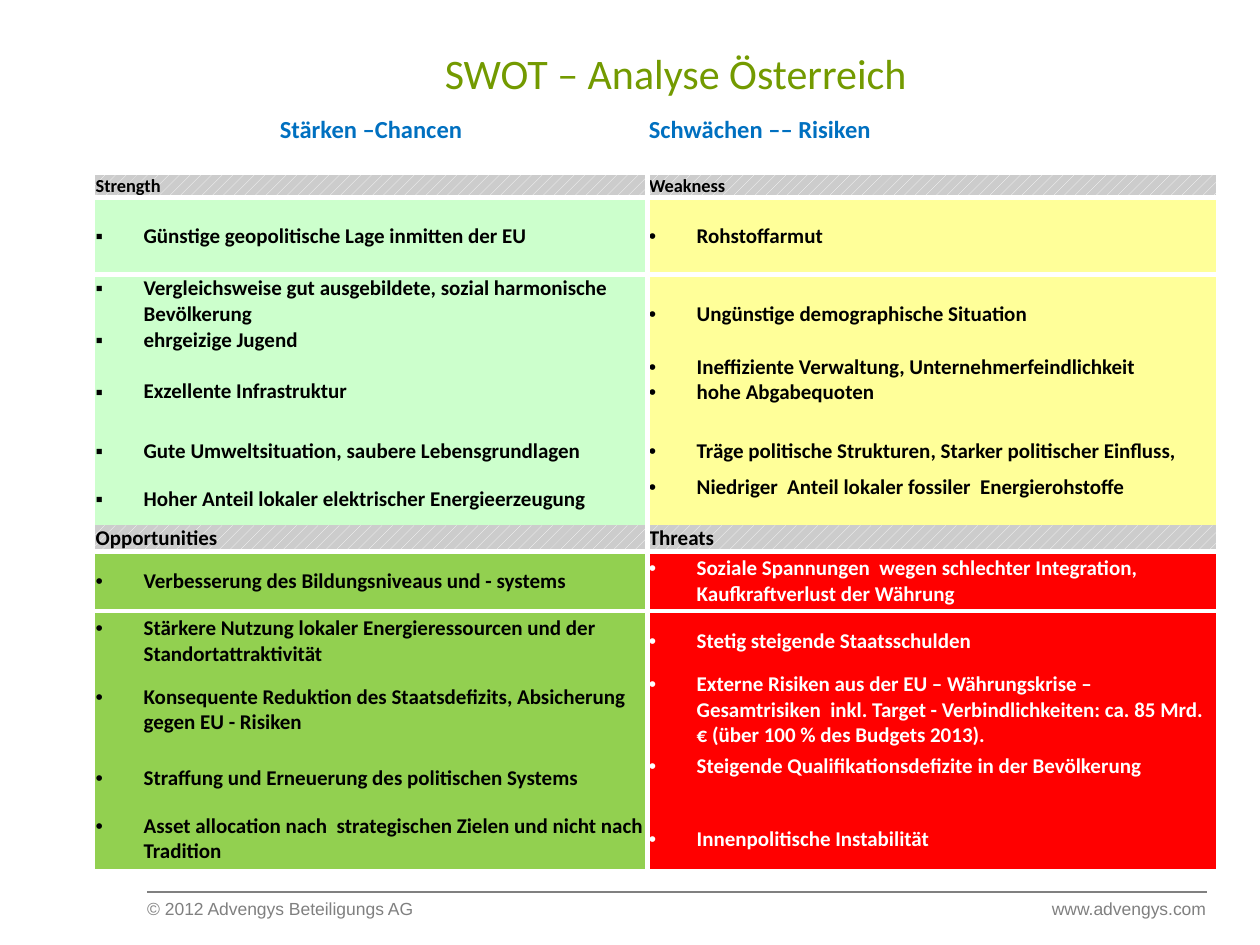
"""Builds the SWOT analysis slide for Austria."""
from lxml import etree
from pptx import Presentation
from pptx.dml.color import RGBColor
from pptx.enum.dml import MSO_PATTERN
from pptx.enum.shapes import MSO_CONNECTOR
from pptx.enum.text import MSO_ANCHOR, MSO_AUTO_SIZE, PP_ALIGN
from pptx.oxml.ns import qn
from pptx.util import Inches, Pt

STRAIGHT = MSO_CONNECTOR.STRAIGHT
PERCENT_20 = MSO_PATTERN.PERCENT_20
TOP, MIDDLE = MSO_ANCHOR.TOP, MSO_ANCHOR.MIDDLE
LEFT, CENTER = PP_ALIGN.LEFT, PP_ALIGN.CENTER
NO_AUTO_SIZE = MSO_AUTO_SIZE.NONE

WHITE = RGBColor(0xFF, 0xFF, 0xFF)
BLACK = RGBColor(0x00, 0x00, 0x00)
GRAY = RGBColor(0x80, 0x80, 0x80)
SILVER = RGBColor(0xCC, 0xCC, 0xCC)
OLIVE = RGBColor(0x73, 0x9A, 0x00)
BLUE = RGBColor(0x00, 0x70, 0xC0)
MINT = RGBColor(0xCC, 0xFF, 0xCC)
YELLOW = RGBColor(0xFF, 0xFF, 0x99)
GREEN = RGBColor(0x92, 0xD0, 0x50)
RED = RGBColor(0xFF, 0x00, 0x00)

PLAIN_TABLE_STYLE = "{2D5ABB26-0587-4C30-8999-92F81FD0307C}"
COL_WIDTHS = [4.39, 4.51]
ROW_HEIGHTS = [0.71, 0.18, 0.61, 0.63, 0.6, 0.35, 0.41,
               0.21, 0.47, 0.48, 0.61, 0.48, 0.48]
STRENGTH_ROW, OPPORTUNITY_ROW = 1, 7
RAISED_CELLS = {(4, 1), (6, 1), (11, 1)}

STRENGTHS = [
    ["Günstige geopolitische Lage inmitten der EU"],
    ["Vergleichsweise gut ausgebildete, sozial harmonische Bevölkerung",
     "ehrgeizige Jugend"],
    ["Exzellente Infrastruktur"],
    ["Gute Umweltsituation, saubere Lebensgrundlagen"],
    ["Hoher Anteil lokaler elektrischer Energieerzeugung"],
]
WEAKNESSES = [
    ["Rohstoffarmut"],
    ["Ungünstige demographische Situation"],
    ["Ineffiziente Verwaltung, Unternehmerfeindlichkeit", "hohe Abgabequoten"],
    ["Träge politische Strukturen, Starker politischer Einfluss,"],
    ["Niedriger  Anteil lokaler fossiler  Energierohstoffe"],
]
OPPORTUNITIES = [
    ["Verbesserung des Bildungsniveaus und - systems"],
    ["Stärkere Nutzung lokaler Energieressourcen und der Standortattraktivität"],
    ["Konsequente Reduktion des Staatsdefizits, Absicherung gegen EU - Risiken"],
    ["Straffung und Erneuerung des politischen Systems"],
    ["Asset allocation nach  strategischen Zielen und nicht nach Tradition"],
]
THREATS = [
    ["Soziale Spannungen  wegen schlechter Integration,  "
     "Kaufkraftverlust der Währung"],
    ["Stetig steigende Staatsschulden"],
    ["Externe Risiken aus der EU – Währungskrise – Gesamtrisiken  inkl. "
     "Target - Verbindlichkeiten: ca. 85 Mrd. € (über 100 % des Budgets 2013)."],
    ["Steigende Qualifikationsdefizite in der Bevölkerung"],
    ["Innenpolitische Instabilität"],
]


def style_font(font, size, color, name="Calibri", bold=False):
    font.size, font.name, font.bold = Pt(size), name, bold
    font.color.rgb = color


def add_title(slide, text):
    sp = slide.shapes.title
    sp.left, sp.top = Inches(3.43), Inches(0.29)
    sp.width, sp.height = Inches(4.33), Inches(0.58)
    tf = sp.text_frame
    tf.text = text
    tf.auto_size = NO_AUTO_SIZE
    tf.vertical_anchor = MIDDLE
    p = tf.paragraphs[0]
    p.alignment = LEFT
    style_font(p.runs[0].font, 24, OLIVE)


def add_footer_text(slide, text, left, width):
    sp = slide.shapes.add_textbox(Inches(left), Inches(7.08), Inches(width), Inches(0.27))
    tf = sp.text_frame
    tf.text = text
    tf.word_wrap = False
    style_font(tf.paragraphs[0].runs[0].font, 10, GRAY, "Arial")


def add_footer_line(slide):
    y = Inches(7.08)
    line = slide.shapes.add_connector(STRAIGHT, Inches(1.17), y, Inches(9.58), y)
    line.line.color.rgb = GRAY
    line.line.width = Pt(0.75)
    etree.SubElement(line._element.spPr, qn("a:effectLst"))


def add_borders(cell, sides):
    """Draw white lines on the sides, which come in the order L, R, T, B."""
    tcPr = cell._tc.get_or_add_tcPr()
    for side in sides:
        ln = etree.SubElement(tcPr, qn(f"a:ln{side}"), w=str(Pt(3)))
        fill = etree.SubElement(ln, qn("a:solidFill"))
        etree.SubElement(fill, qn("a:srgbClr"), val=str(WHITE))


def add_bullet(p, char):
    pPr = p._p.get_or_add_pPr()
    pPr.set("marL", str(Inches(0.38)))
    pPr.set("indent", str(Inches(-0.38)))
    etree.SubElement(pPr, qn("a:buFont"), typeface="Arial")
    etree.SubElement(pPr, qn("a:buChar"), char=char)
    tabs = etree.SubElement(pPr, qn("a:tabLst"))
    etree.SubElement(tabs, qn("a:tab"), pos=str(Inches(0.25)), algn="l")


def fill_cell(cell, lines, size, color, bullet=None, anchor=MIDDLE):
    cell.margin_left = cell.margin_right = Inches(0.01)
    cell.margin_top = cell.margin_bottom = 0
    cell.vertical_anchor = anchor
    tf = cell.text_frame
    tf.text = "\n".join(lines)
    for p in tf.paragraphs:
        if bullet:
            add_bullet(p, bullet)
        style_font(p.runs[0].font, size, color, bold=True)


def fill_heading(cell, text, side, size, anchor):
    add_borders(cell, side + "B")
    fill_cell(cell, [text], size, BLACK, anchor=anchor)
    cell.fill.patterned()
    cell.fill.pattern = PERCENT_20
    cell.fill.fore_color.rgb = WHITE
    cell.fill.back_color.rgb = SILVER


def fill_quadrant(table, row, col, heading, items, background, color, bullet):
    side = "RL"[col]
    size, anchor = (10.5, TOP) if row == STRENGTH_ROW else (12, MIDDLE)
    fill_heading(table.cell(row, col), heading, side, size, anchor)
    for i, lines in enumerate(items, row + 1):
        cell = table.cell(i, col)
        add_borders(cell, side + ("T" if i == row + 1 else ""))
        fill_cell(cell, lines, 12, color, bullet)
        if (i, col) in RAISED_CELLS:
            cell.margin_bottom = Inches(0.19)
        cell.fill.solid()
        cell.fill.fore_color.rgb = background


def add_swot_table(slide):
    frame = slide.shapes.add_table(
        len(ROW_HEIGHTS), len(COL_WIDTHS), Inches(0.75), Inches(0.68),
        Inches(sum(COL_WIDTHS)), Inches(sum(ROW_HEIGHTS)))
    table = frame.table
    table.first_row = table.horz_banding = False
    table._tbl.tblPr.find(qn("a:tableStyleId")).text = PLAIN_TABLE_STYLE
    for column, width in zip(table.columns, COL_WIDTHS):
        column.width = Inches(width)
    for row, height in zip(table.rows, ROW_HEIGHTS):
        row.height = Inches(height)
    for col, text in enumerate(["Stärken –Chancen", "Schwächen –– Risiken"]):
        fill_cell(table.cell(0, col), [text], 14, BLUE)
    table.cell(0, 0).text_frame.paragraphs[0].alignment = CENTER
    fill_quadrant(table, STRENGTH_ROW, 0, "Strength", STRENGTHS, MINT, BLACK, "▪")
    fill_quadrant(table, STRENGTH_ROW, 1, "Weakness", WEAKNESSES, YELLOW, BLACK, "•")
    fill_quadrant(table, OPPORTUNITY_ROW, 0, "Opportunities", OPPORTUNITIES, GREEN, BLACK, "•")
    fill_quadrant(table, OPPORTUNITY_ROW, 1, "Threats", THREATS, RED, WHITE, "•")


def main():
    prs = Presentation()
    prs.slide_width, prs.slide_height = Inches(10), Inches(7.5)
    slide = prs.slides.add_slide(prs.slide_layouts[5])
    add_footer_text(slide, "© 2012 Advengys Beteiligungs AG", 1.07, 2.34)
    add_footer_line(slide)
    add_footer_text(slide, "www.advengys.com", 8.25, 1.51)
    add_title(slide, "SWOT – Analyse Österreich")
    add_swot_table(slide)
    prs.save("out.pptx")


if __name__ == "__main__":
    main()
